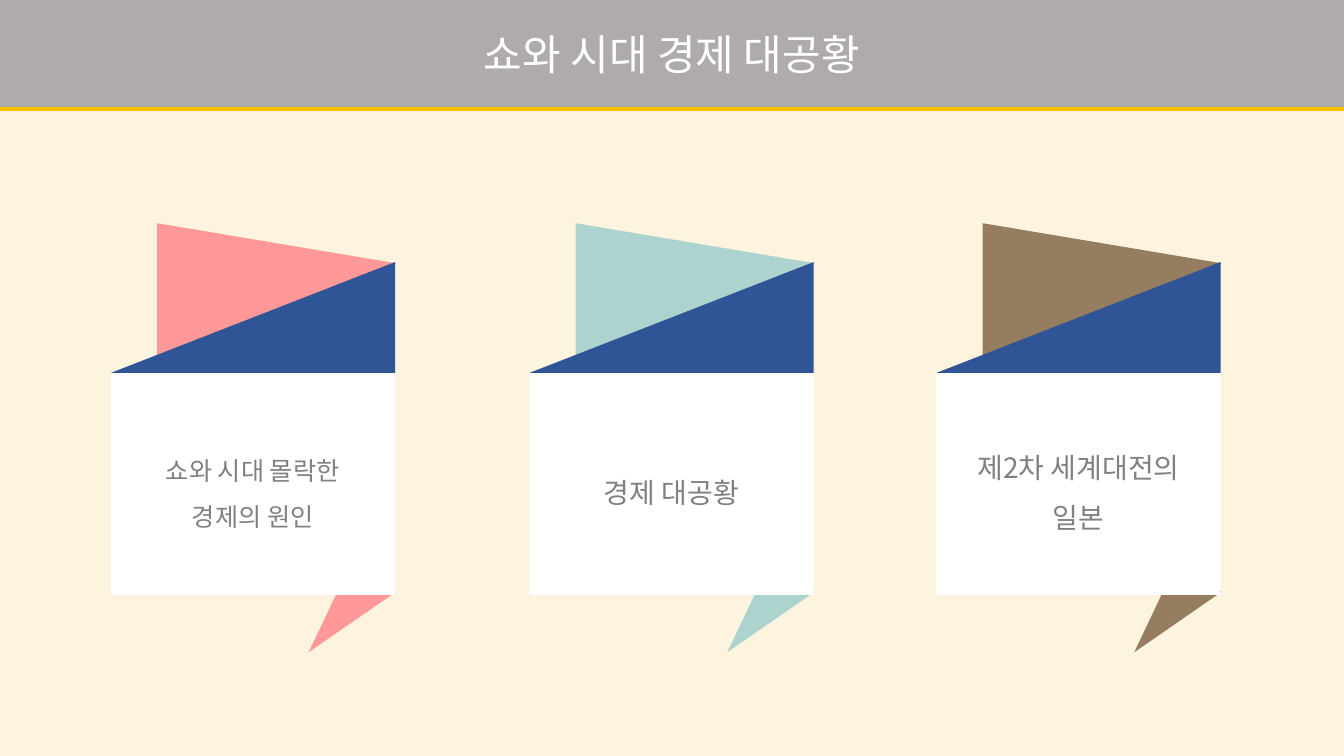
from lxml import etree
from pptx import Presentation
from pptx.dml.color import RGBColor
from pptx.enum.shapes import MSO_SHAPE
from pptx.enum.text import MSO_ANCHOR, PP_ALIGN
from pptx.oxml.ns import qn
from pptx.util import Pt

RECT = MSO_SHAPE.RECTANGLE
TRI = MSO_SHAPE.ISOSCELES_TRIANGLE
RIGHT = MSO_SHAPE.RIGHT_TRIANGLE
MIDDLE = MSO_ANCHOR.MIDDLE
CENTER = PP_ALIGN.CENTER

CREAM = RGBColor(0xFC, 0xF4, 0xDF)
GRAY = RGBColor(0xAF, 0xAB, 0xAB)
WHITE = RGBColor(0xFF, 0xFF, 0xFF)
INK = RGBColor(0x80, 0x80, 0x80)
GOLD = RGBColor(0xFF, 0xC0, 0x00)
BLUE = RGBColor(0x2F, 0x55, 0x97)
PINK = RGBColor(0xFF, 0x99, 0x99)
MINT = RGBColor(0xAC, 0xD3, 0xCE)
BROWN = RGBColor(0x96, 0x7D, 0x5F)

FONT = "Noto Sans CJK KR"
WIDE, HIGH = 960, 540
CARD_W, CARD_H, CARD_TOP, FOLD_H = 203, 158.6, 266.4, 79.2


def write(shape, text, size=20, color=INK, space=1.5, anchor=MIDDLE):
    frame = shape.text_frame
    frame.word_wrap = True
    frame.vertical_anchor = anchor
    for i, line in enumerate(text.split("\n")):
        para = frame.add_paragraph() if i else frame.paragraphs[0]
        para.alignment = CENTER
        para.line_spacing = space
        run = para.add_run()
        run.text = line
        font = run.font
        font.name, font.size = FONT, Pt(size)
        font.color.rgb = color
        east = etree.SubElement(run._r.get_or_add_rPr(), qn("a:ea"))
        east.set("typeface", FONT)


class Deck:
    def __init__(self):
        self.show = Presentation()
        self.show.slide_width, self.show.slide_height = Pt(WIDE), Pt(HIGH)
        self.slide = self.show.slides.add_slide(self.show.slide_layouts[5])
        fill = self.slide.background.fill
        fill.solid()
        fill.fore_color.rgb = CREAM

    def title(self, text, height):
        head = self.slide.shapes.title
        head.left, head.top = Pt(0), Pt(0)
        head.width, head.height = Pt(WIDE), Pt(height)
        head.fill.solid()
        head.fill.fore_color.rgb = GRAY
        write(head, text, size=30, color=WHITE, space=1)
        effects = etree.SubElement(head.element.spPr, qn("a:effectLst"))
        edge = etree.SubElement(effects, qn("a:outerShdw"), dist=str(Pt(3)),
                                dir="5400000", algn="t", rotWithShape="0")
        etree.SubElement(edge, qn("a:srgbClr"), val=str(GOLD))

    def block(self, group, kind, box, color, turn=0, peak=None, flip=False):
        shape = group.shapes.add_shape(kind, *map(Pt, box))
        shape.shadow.inherit = False
        shape.fill.solid()
        shape.fill.fore_color.rgb = color
        shape.line.fill.background()
        shape.rotation = turn
        if peak is not None:
            shape.adjustments[0] = peak
        if flip:
            shape.element.spPr.get_or_add_xfrm().set("flipH", "1")
        return shape

    def card(self, left, color, text=None):
        group = self.slide.shapes.add_group_shape()
        self.block(group, TRI, (left + 146.2, 402.5, 38.9, 72.7), color,
                   turn=218.9, peak=0.552)
        self.block(group, TRI, (left + 52, 140.4, 132.5, 170.6), color,
                   turn=90, peak=0.216)
        face = self.block(group, RECT, (left, CARD_TOP, CARD_W, CARD_H), WHITE)
        self.block(group, RIGHT, (left, CARD_TOP - FOLD_H, CARD_W, FOLD_H),
                   BLUE, flip=True)
        if text:
            write(face, text)

    def label(self, box, text, **style):
        write(self.slide.shapes.add_textbox(*map(Pt, box)), text, **style)

    def save(self):
        self.show.save("out.pptx")


def main():
    deck = Deck()
    deck.title("쇼와 시대 경제 대공황", 76.3)
    deck.card(79.2, PINK)
    deck.card(378.2, MINT, "경제 대공황")
    deck.card(668.9, BROWN, "제2차 세계대전의\n일본")
    deck.label((70, 311, 221, 68.4), "쇼와 시대 몰락한\n경제의 원인",
               size=18, anchor=MSO_ANCHOR.TOP)
    deck.save()


if __name__ == "__main__":
    main()
